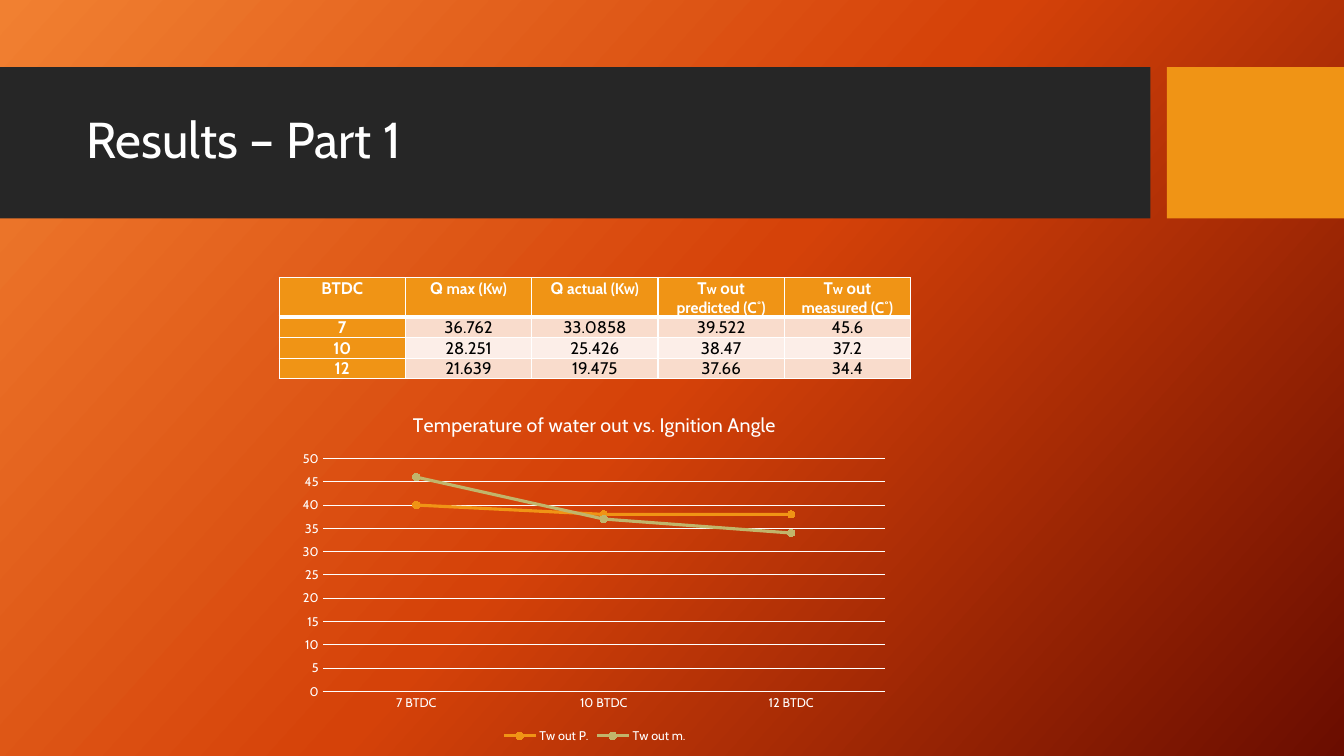
from copy import deepcopy
from lxml import etree
from pptx import Presentation
from pptx.chart.data import CategoryChartData
from pptx.dml.color import RGBColor
from pptx.enum import chart as ch, shapes, text
from pptx.oxml import parse_xml
from pptx.oxml.ns import nsdecls, qn
from pptx.util import Pt

FACE = "Cabin"
WHITE, BLACK, DARK = "FFFFFF", "000000", "262626"
GOLD, OLIVE = "F09415", "C1B56B"
BANDS = ["F9DCCC", "FCEEE8"]
HEADS = [
    [("BTDC", 12)],
    [("Q ", 12), ("max (Kw)", 11)],
    [("Q ", 12), ("actual (Kw)", 11)],
    [("T", 12), ("w", 10), (" out ", 12), ("predicted (C˚)", 11)],
    [("T", 12), ("w", 10), (" out ", 12), ("measured (C˚)", 11)],
]
ROWS = [
    (7, 36.762, 33.0858, 39.522, 45.6),
    (10, 28.251, 25.426, 38.47, 37.2),
    (12, 21.639, 19.475, 37.66, 34.4),
]
SERIES = [("Tw out P.", 3, GOLD), ("Tw out m.", 4, OLIVE)]


def paint(color, code):
    color.rgb = RGBColor.from_string(code)


def style(font, size, code=WHITE, bold=False):
    font.name = FACE
    font.size = Pt(size)
    font.bold = bold
    paint(font.color, code)


def stroke(line, code, width):
    line.fill.solid()
    paint(line.color, code)
    line.width = Pt(width)


def backdrop(slide, codes, angle):
    fill = slide.background.fill
    fill.gradient()
    fill.gradient_angle = 360 - angle
    stops = slide.background._cSld.find(".//" + qn("a:gsLst"))
    stops.append(deepcopy(stops[-1]))
    for n, (stop, code) in enumerate(zip(stops, codes)):
        stop.set("pos", str(n * 50000))
        for child in list(stop):
            stop.remove(child)
        etree.SubElement(stop, qn("a:srgbClr")).set("val", code)


def block(slide, left, width, code):
    box = slide.shapes.add_shape(
        shapes.MSO_SHAPE.RECTANGLE, Pt(left), Pt(48), Pt(width), Pt(108))
    box.shadow.inherit = False
    box.fill.solid()
    paint(box.fill.fore_color, code)
    box.line.fill.background()


def heading(slide, words):
    title = slide.shapes.title
    slide.shapes._spTree.append(title._element)
    title.left, title.top = Pt(46.8), Pt(59)
    title.width, title.height = Pt(756.7), Pt(85)
    frame = title.text_frame
    frame.text = words
    frame.auto_size = text.MSO_AUTO_SIZE.NONE
    frame.vertical_anchor = text.MSO_ANCHOR.MIDDLE
    frame.margin_left = Pt(15)
    line = frame.paragraphs[0]
    line.alignment = text.PP_ALIGN.LEFT
    line.line_spacing = 0.9
    style(line.runs[0].font, 36)


def edge(cell, side, width):
    cell._tc.get_or_add_tcPr().append(parse_xml(
        f'<a:ln{side} {nsdecls("a")} w="{Pt(width)}"><a:solidFill>'
        f'<a:srgbClr val="{WHITE}"/></a:solidFill></a:ln{side}>'))


def fill_cell(cell, parts, fill, code, bold, top, base):
    cell.margin_left = cell.margin_right = Pt(5)
    cell.margin_top = cell.margin_bottom = 0
    for side, width in zip("LRTB", (1, 1, top, base)):
        edge(cell, side, width)
    cell.fill.solid()
    paint(cell.fill.fore_color, fill)
    line = cell.text_frame.paragraphs[0]
    line.alignment = text.PP_ALIGN.CENTER
    for words, size in parts:
        run = line.add_run()
        run.text = words
        style(run.font, size, code, bold)


def grid(slide):
    frame = slide.shapes.add_table(
        len(ROWS) + 1, len(HEADS), Pt(199.4), Pt(198.4), Pt(451), Pt(70.5))
    table = frame.table
    table.horz_banding = False
    for col in table.columns:
        col.width = Pt(90.2)
    for n, row in enumerate(table.rows):
        row.height = Pt(14.1 if n else 28.2)
    for c, parts in enumerate(HEADS):
        fill_cell(table.cell(0, c), parts, GOLD, WHITE, True, 1, 3)
    for r, vals in enumerate(ROWS, 1):
        for c, val in enumerate(vals):
            key = c == 0
            fill_cell(table.cell(r, c), [(str(val), 12)],
                      GOLD if key else BANDS[(r - 1) % 2],
                      WHITE if key else BLACK, key, 3 if r == 1 else 1, 1)


def place_plot(chart, x, y, w, h):
    area = chart._chartSpace.chart.plotArea
    for old in area.findall(qn("c:layout")):
        area.remove(old)
    sizes = "".join(f'<c:{k} val="{v}"/>'
                    for k, v in zip("xywh", (x, y, w, h)))
    area.insert(0, parse_xml(
        f'<c:layout {nsdecls("c")}><c:manualLayout>'
        '<c:layoutTarget val="inner"/><c:xMode val="edge"/>'
        f'<c:yMode val="edge"/>{sizes}</c:manualLayout></c:layout>'))


def graph(slide):
    data = CategoryChartData()
    data.categories = [f"{row[0]} BTDC" for row in ROWS]
    for name, col, _ in SERIES:
        data.add_series(name, [round(row[col]) for row in ROWS])
    chart = slide.shapes.add_chart(
        ch.XL_CHART_TYPE.LINE_MARKERS, Pt(208.8), Pt(282.2),
        Pt(432), Pt(252), data).chart
    style(chart.font, 10)
    chart.has_title = True
    frame = chart.chart_title.text_frame
    frame.text = "Temperature of water out vs. Ignition Angle"
    style(frame.paragraphs[0].runs[0].font, 14)
    chart.has_legend = True
    chart.legend.position = ch.XL_LEGEND_POSITION.BOTTOM
    chart.legend.include_in_layout = False
    style(chart.legend.font, 9)
    cats, vals = chart.category_axis, chart.value_axis
    for axis in (cats, vals):
        axis.major_tick_mark = ch.XL_TICK_MARK.NONE
        axis.minor_tick_mark = ch.XL_TICK_MARK.NONE
        style(axis.tick_labels.font, 9)
    stroke(cats.format.line, WHITE, 0.75)
    vals.format.line.fill.background()
    vals.minimum_scale, vals.maximum_scale, vals.major_unit = 0, 50, 5
    vals.tick_labels.number_format = "General"
    vals.tick_labels.number_format_is_linked = False
    stroke(vals.major_gridlines.format.line, WHITE, 0.75)
    plot = chart.plots[0]
    plot.vary_by_categories = False
    for line, (_, _, code) in zip(plot.series, SERIES):
        line.smooth = False
        stroke(line.format.line, code, 2.25)
        mark = line.marker
        mark.style, mark.size = ch.XL_MARKER_STYLE.CIRCLE, 5
        mark.format.fill.solid()
        paint(mark.format.fill.fore_color, code)
        stroke(mark.format.line, code, 0.75)
    place_plot(chart, 0.05, 0.18, 0.93, 0.66)


def main():
    deck = Presentation()
    deck.slide_width, deck.slide_height = Pt(960), Pt(540)
    slide = deck.slides.add_slide(deck.slide_layouts[5])
    backdrop(slide, ["F18031", "D54209", "6A0D00"], 42)
    block(slide, 0, 821.8, DARK)
    block(slide, 833.5, 126.5, GOLD)
    heading(slide, "Results – Part 1")
    grid(slide)
    graph(slide)
    deck.save("out.pptx")


if __name__ == "__main__":
    main()
